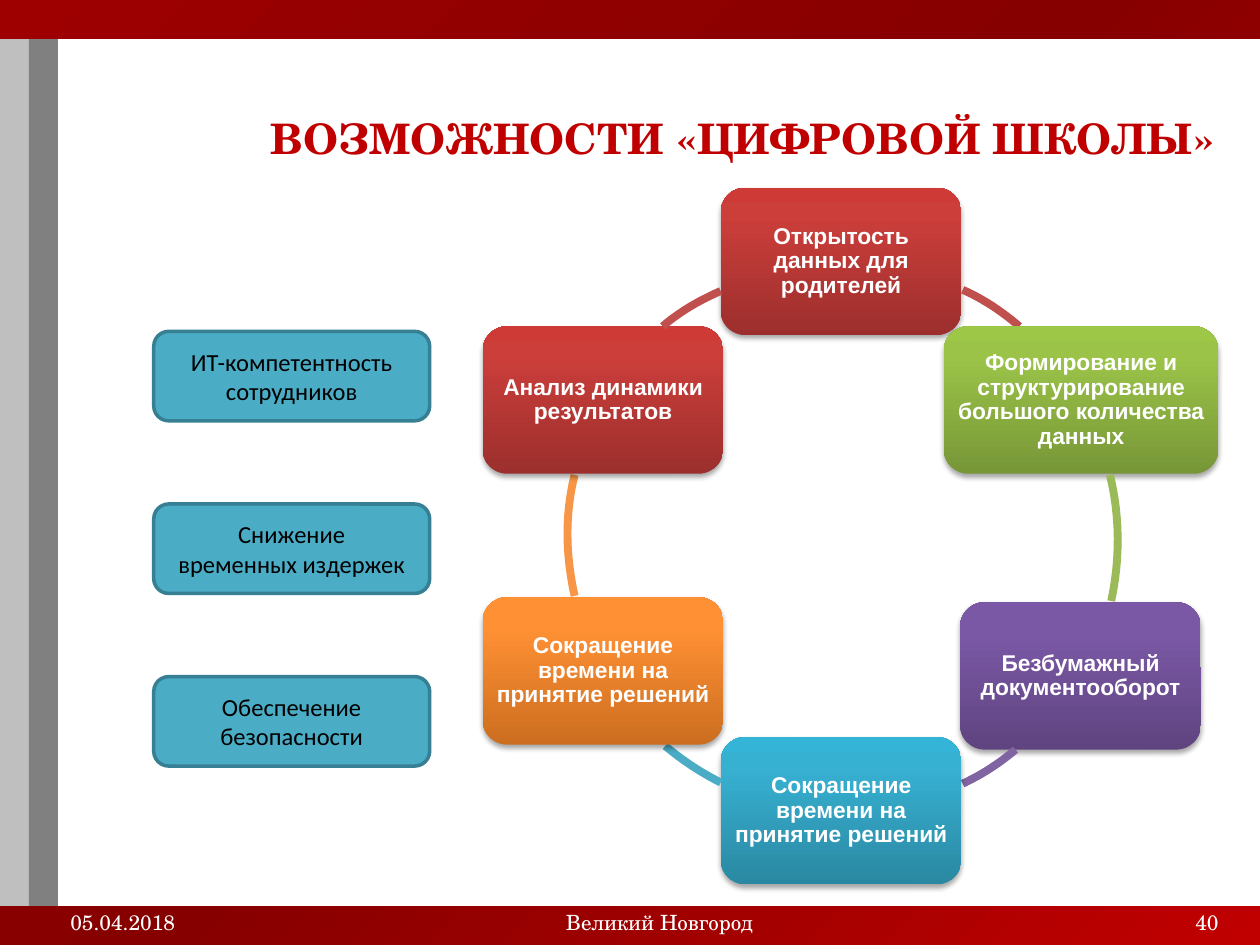
"""Build the slide on the opportunities of a digital school."""
from dataclasses import dataclass

from lxml.etree import SubElement
from pptx import Presentation
from pptx.dml.color import RGBColor
from pptx.enum.shapes import MSO_SHAPE as Shape
from pptx.enum.text import MSO_ANCHOR as Anchor, PP_ALIGN as Align
from pptx.oxml import parse_xml
from pptx.oxml.ns import nsdecls, qn
from pptx.util import Inches, Pt


@dataclass(frozen=True)
class Theme:
    serif: str = "TeX Gyre Schola"
    sans: str = "Arial"
    body: str = "Calibri"
    title_pt: int = 24
    card_pt: int = 14
    node_pt: int = 13
    footer_pt: int = 12
    accent: str = "C00000"
    white: str = "FFFFFF"
    black: str = "000000"
    light_bar: str = "BFBFBF"
    dark_bar: str = "808080"
    card: str = "4BACC6"
    card_edge: str = "377F92"
    backdrop: tuple = ((0, "C00000"), (50, "860000"), (100, "9E0000"))
    red: tuple = ("9C2F2D", "CB3E3A", "CE3B37")
    green: tuple = ("779737", "9BC348", "9DC746")
    purple: tuple = ("5F4480", "7B58A6", "7C57A8")
    blue: tuple = ("2A88A2", "37B1D2", "34B4D6")
    orange: tuple = ("CC6E20", "FF9034", "FF9136")
    red_arc: str = "C0504D"
    green_arc: str = "9BBB59"
    purple_arc: str = "8064A2"
    blue_arc: str = "4BACC6"
    orange_arc: str = "F79646"


@dataclass(frozen=True)
class Node:
    label: str
    left: float
    top: float
    shades: tuple
    arc_color: str
    arc: tuple
    width: float = 1.91


@dataclass(frozen=True)
class Footer:
    text: str
    left: float
    width: float
    align: Align


THEME = Theme()
NODE_HEIGHT = 1.17
CARD_TOP, CARD_PITCH = 2.63, 1.37
ARC_STEPS = 12

BARS = ((0.45, 9.55, THEME.white), (0, 0.23, THEME.light_bar), (0.23, 0.23, THEME.dark_bar))
CARDS = (
    ("ИТ-компетентность", "сотрудников"),
    ("Снижение", "временных издержек"),
    ("Обеспечение", "безопасности"),
)
FOOTERS = (
    Footer("05.04.2018", 0.46, 2.33, Align.LEFT),
    Footer("Великий Новгород", 3.65, 3.17, Align.CENTER),
    Footer("40", 7.44, 2.33, Align.RIGHT),
)
NODES = (
    Node("Открытость данных для родителей", 5.72, 1.49, THEME.red, THEME.red_arc,
         ((7.64, 2.3), (7.8, 2.37), (7.95, 2.47), (8.09, 2.59))),
    Node("Формирование и структурирование большого количества данных", 7.49, 2.59,
         THEME.green, THEME.green_arc,
         ((8.81, 3.77), (8.89, 4.1), (8.89, 4.44), (8.82, 4.77)), width=2.18),
    Node("Безбумажный документооборот", 7.62, 4.78, THEME.purple, THEME.purple_arc,
         ((8.06, 5.95), (7.93, 6.06), (7.79, 6.15), (7.64, 6.22))),
    Node("Сокращение времени на принятие решений", 5.72, 5.85, THEME.blue, THEME.blue_arc,
         ((5.72, 6.21), (5.56, 6.13), (5.41, 6.03), (5.28, 5.92))),
    Node("Сокращение времени на принятие решений", 3.83, 4.74, THEME.orange, THEME.orange_arc,
         ((4.56, 4.73), (4.49, 4.41), (4.48, 4.09), (4.56, 3.77))),
    Node("Анализ динамики результатов", 3.83, 2.59, THEME.red, THEME.red_arc,
         ((5.26, 2.59), (5.4, 2.47), (5.56, 2.38), (5.72, 2.31))),
)


def rgb(color: str) -> RGBColor:
    return RGBColor.from_string(color)


def set_gradient(properties, stops, direction: str) -> None:
    marks = "".join(f'<a:gs pos="{position * 1000}"><a:srgbClr val="{color}"/></a:gs>'
                    for position, color in stops)
    gradient = parse_xml(f'<a:gradFill {nsdecls("a")} rotWithShape="1">'
                         f"<a:gsLst>{marks}</a:gsLst>{direction}</a:gradFill>")
    properties.replace(properties.find(qn("a:solidFill")), gradient)


def add_shadow(shape) -> None:
    effects = shape._element.spPr.find(qn("a:effectLst"))
    shadow = SubElement(effects, qn("a:outerShdw"), blurRad=str(Pt(3.1)), dist=str(Pt(1.8)),
                        dir="5400000", rotWithShape="0")
    color = SubElement(shadow, qn("a:srgbClr"), val=THEME.black)
    SubElement(color, qn("a:alpha"), val="35000")


def write(shape, lines, face: str, size: int, color: str, align=Align.CENTER,
          anchor=Anchor.MIDDLE, bold=False, spacing=1.0, inset=None) -> None:
    frame = shape.text_frame
    frame.text = "\n".join(lines)
    frame.word_wrap = True
    frame.vertical_anchor = anchor
    if inset is not None:
        frame.margin_left = frame.margin_right = Inches(inset)
        frame.margin_top = frame.margin_bottom = Inches(inset)
    for paragraph in frame.paragraphs:
        paragraph.alignment = align
        paragraph.line_spacing = spacing
        font = paragraph.font
        font.name, font.size, font.bold = face, Pt(size), bold
        font.color.rgb = rgb(color)


def add_block(slide, kind: Shape, left: float, top: float, width: float, height: float,
              color: str):
    block = slide.shapes.add_shape(kind, Inches(left), Inches(top), Inches(width), Inches(height))
    block.shadow.inherit = False
    block.fill.solid()
    block.fill.fore_color.rgb = rgb(color)
    block.line.fill.background()
    return block


def add_card(slide, lines, top: float) -> None:
    card = add_block(slide, Shape.ROUNDED_RECTANGLE, 1.22, top, 2.19, 0.71, THEME.card)
    card.line.color.rgb = rgb(THEME.card_edge)
    card.line.width = Pt(2)
    write(card, lines, THEME.body, THEME.card_pt, THEME.black)


def add_node(slide, node: Node) -> None:
    box = add_block(slide, Shape.ROUNDED_RECTANGLE, node.left, node.top, node.width,
                    NODE_HEIGHT, node.shades[0])
    set_gradient(box._element.spPr, zip((0, 80, 100), node.shades),
                 '<a:lin ang="16200000" scaled="0"/>')
    add_shadow(box)
    write(box, [node.label], THEME.sans, THEME.node_pt, THEME.white, bold=True,
          spacing=0.9, inset=0.05)


def bezier(controls, t: float) -> tuple:
    weights = ((1 - t) ** 3, 3 * t * (1 - t) ** 2, 3 * t ** 2 * (1 - t), t ** 3)
    return tuple(Inches(sum(w * value for w, value in zip(weights, axis)))
                 for axis in zip(*controls))


def add_arc(slide, node: Node) -> None:
    start, *rest = [bezier(node.arc, step / ARC_STEPS) for step in range(ARC_STEPS + 1)]
    builder = slide.shapes.build_freeform(*start)
    builder.add_line_segments(rest, close=False)
    arc = builder.convert_to_shape()
    arc.shadow.inherit = False
    arc.fill.background()
    arc.line.color.rgb = rgb(node.arc_color)
    arc.line.width = Pt(4.5)


def add_text(slide, left: float, top: float, width: float, height: float):
    return slide.shapes.add_textbox(Inches(left), Inches(top), Inches(width), Inches(height))


def main() -> None:
    deck = Presentation()
    deck.slide_width, deck.slide_height = Inches(10), Inches(7.5)
    slide = deck.slides.add_slide(deck.slide_layouts[6])
    slide.background.fill.solid()
    set_gradient(slide._element.find(".//" + qn("p:bgPr")), THEME.backdrop,
                 '<a:path path="circle"><a:fillToRect l="100000" t="100000"/></a:path>')

    for left, width, color in BARS:
        add_block(slide, Shape.RECTANGLE, left, 0.31, width, 6.88, color)
    for footer in FOOTERS:
        write(add_text(slide, footer.left, 7.17, footer.width, 0.29), [footer.text],
              THEME.serif, THEME.footer_pt, THEME.white, footer.align, Anchor.TOP)
    write(add_text(slide, 2.01, 0.44, 7.77, 1.31), ["ВОЗМОЖНОСТИ «ЦИФРОВОЙ ШКОЛЫ»"],
          THEME.serif, THEME.title_pt, THEME.accent, bold=True, inset=0.05)
    for index, lines in enumerate(CARDS):
        add_card(slide, lines, CARD_TOP + index * CARD_PITCH)
    for node in NODES:
        add_node(slide, node)
        add_arc(slide, node)
    deck.save("out.pptx")


if __name__ == "__main__":
    main()
